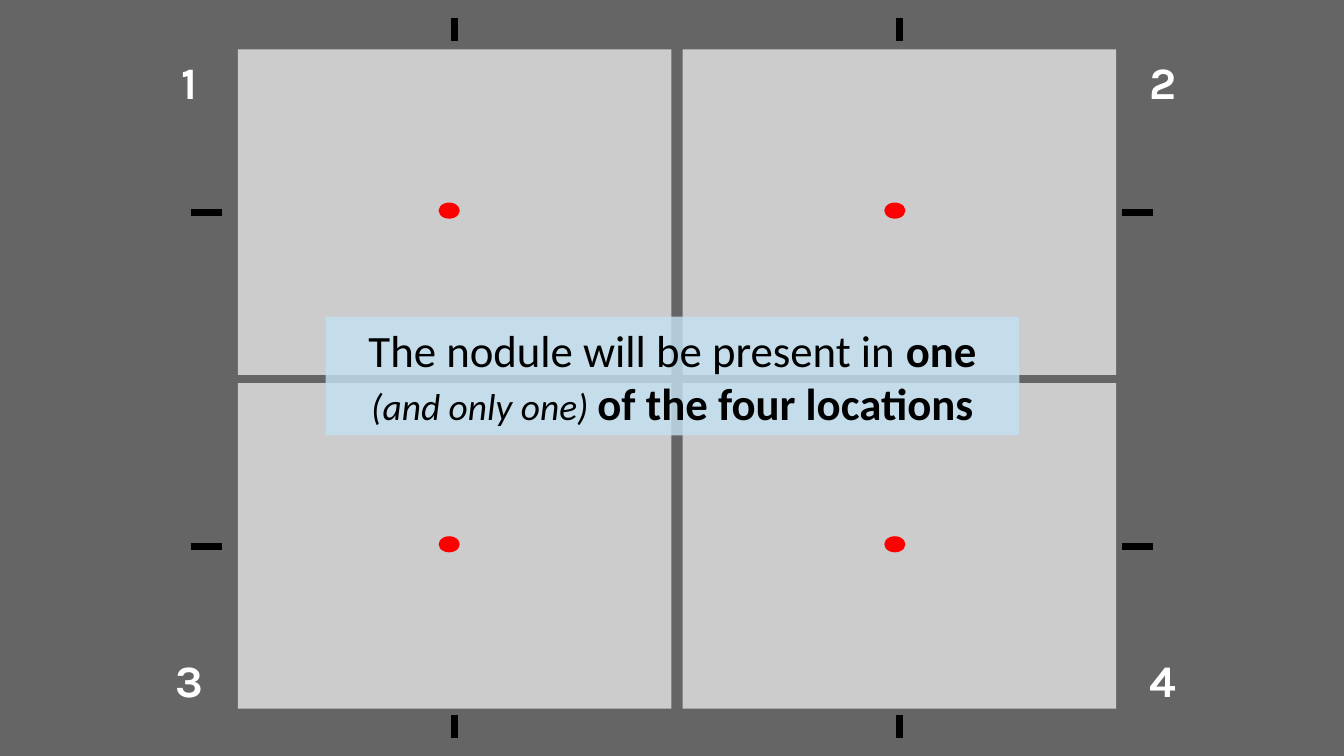
"""Build the slide that shows four possible nodule locations."""
import itertools

import lxml.etree
import pptx
import pptx.dml.color
import pptx.enum.shapes
import pptx.enum.text
import pptx.oxml
import pptx.oxml.ns
import pptx.util

Inches = pptx.util.Inches
RGBColor = pptx.dml.color.RGBColor
Shape = pptx.enum.shapes.MSO_SHAPE
qn = pptx.oxml.ns.qn

BLACK = RGBColor(0x00, 0x00, 0x00)
WHITE = RGBColor(0xFF, 0xFF, 0xFF)
BACKDROP_GREY = RGBColor(0x65, 0x65, 0x65)
PANEL_GREY = RGBColor(0xCC, 0xCC, 0xCC)
DOT_RED = RGBColor(0xFF, 0x00, 0x00)
BANNER_BLUE = RGBColor(0xC4, 0xE1, 0xF2)

SLIDE_SIZE = (13.33, 7.5)
PANEL_SIZE = (4.3, 3.23)
DOT_SIZE = (0.21, 0.16)
NUMBER_SIZE = (0.49, 0.64)
PANEL_LEFTS, PANEL_TOPS = (2.36, 6.77), (0.49, 3.8)
DOT_LEFTS, DOT_TOPS = (4.35, 8.77), (2.01, 5.32)
NUMBER_LEFTS, NUMBER_TOPS = (1.63, 11.29), (0.49, 6.43)
TICK_COLUMNS, TICK_ROWS = (4.51, 8.92), (2.11, 5.42)
SIDE_TICK_LEFTS, SIDE_TICK_LENGTH = (1.89, 11.13), 0.31
END_TICK_TOPS, END_TICK_LENGTH = (0.18, 7.09), 0.23


def add_filled(slide, kind, position, size, color, opacity=100):
    """Add a borderless preset shape with a solid, possibly see-through fill."""
    shape = slide.shapes.add_shape(kind, *map(Inches, (*position, *size)))
    shape.shadow.inherit = False
    shape.line.fill.background()
    shape.fill.solid()
    shape.fill.fore_color.rgb = color
    if opacity < 100:
        swatch = shape.fill._xPr.find(qn("a:solidFill"))[0]
        lxml.etree.SubElement(swatch, qn("a:alpha"), val=str(opacity * 1000))
    return shape


def add_tick(slide, start, end):
    """Add a thick black alignment tick."""
    tick = slide.shapes.add_connector(
        pptx.enum.shapes.MSO_CONNECTOR.STRAIGHT, *map(Inches, (*start, *end)))
    tick.line.color.rgb = BLACK
    tick.line.width = pptx.util.Pt(5)
    lxml.etree.SubElement(tick._element.spPr, qn("a:effectLst"))


def add_run(paragraph, text, font="Calibri", size=32, color=BLACK, bold=False, italic=False):
    """Append formatted text to a centred paragraph and return its run."""
    paragraph.alignment = pptx.enum.text.PP_ALIGN.CENTER
    run = paragraph.add_run()
    run.text = text
    run.font.name = font
    run.font.size = pptx.util.Pt(size)
    run.font.color.rgb = color
    run.font.bold = bold
    run.font.italic = italic
    return run


def add_text_shadow(run):
    """Give the letters of a run a soft shadow to the lower right."""
    shadow = pptx.oxml.parse_xml(
        '<a:effectLst xmlns:a="http://schemas.openxmlformats.org/drawingml/2006/main">'
        '<a:outerShdw blurRad="38100" dist="38100" dir="2700000" algn="tl">'
        '<a:srgbClr val="000000"><a:alpha val="43000"/></a:srgbClr>'
        '</a:outerShdw></a:effectLst>')
    run.font._element.find(qn("a:solidFill")).addnext(shadow)


def add_number(slide, position, number):
    """Label a panel with its shadowed number."""
    box = slide.shapes.add_textbox(*map(Inches, (*position, *NUMBER_SIZE)))
    box.text_frame.word_wrap = False
    box.text_frame.auto_size = pptx.enum.text.MSO_AUTO_SIZE.SHAPE_TO_FIT_TEXT
    run = add_run(box.text_frame.paragraphs[0], str(number),
                  font="Karla", color=WHITE, bold=True)
    add_text_shadow(run)


def add_banner(slide):
    """Add the translucent message across the four panels."""
    banner = add_filled(slide, Shape.RECTANGLE, (3.23, 3.14), (6.88, 1.18),
                        BANNER_BLUE, opacity=81)
    banner.text_frame.word_wrap = True
    banner.text_frame.auto_size = pptx.enum.text.MSO_AUTO_SIZE.SHAPE_TO_FIT_TEXT
    message = banner.text_frame.paragraphs[0]
    add_run(message, "The nodule will be present in ")
    add_run(message, "one ", bold=True)
    add_run(message, "(and only one) ", size=26.7, italic=True)
    add_run(message, "of the four locations", bold=True)


def main():
    """Assemble and save the slide."""
    deck = pptx.Presentation()
    deck.slide_width, deck.slide_height = map(Inches, SLIDE_SIZE)
    slide = deck.slides.add_slide(deck.slide_layouts[6])
    add_filled(slide, Shape.RECTANGLE, (0, 0), SLIDE_SIZE, BACKDROP_GREY)
    for top, left in itertools.product(PANEL_TOPS, PANEL_LEFTS):
        add_filled(slide, Shape.RECTANGLE, (left, top), PANEL_SIZE, PANEL_GREY)
    for y, left in itertools.product(TICK_ROWS, SIDE_TICK_LEFTS):
        add_tick(slide, (left, y), (left + SIDE_TICK_LENGTH, y))
    for top, x in itertools.product(END_TICK_TOPS, TICK_COLUMNS):
        add_tick(slide, (x, top), (x, top + END_TICK_LENGTH))
    for top, left in itertools.product(DOT_TOPS, DOT_LEFTS):
        add_filled(slide, Shape.OVAL, (left, top), DOT_SIZE, DOT_RED)
    corners = itertools.product(NUMBER_TOPS, NUMBER_LEFTS)
    for number, (top, left) in enumerate(corners, start=1):
        add_number(slide, (left, top), number)
    add_banner(slide)
    deck.save("out.pptx")


if __name__ == "__main__":
    main()
